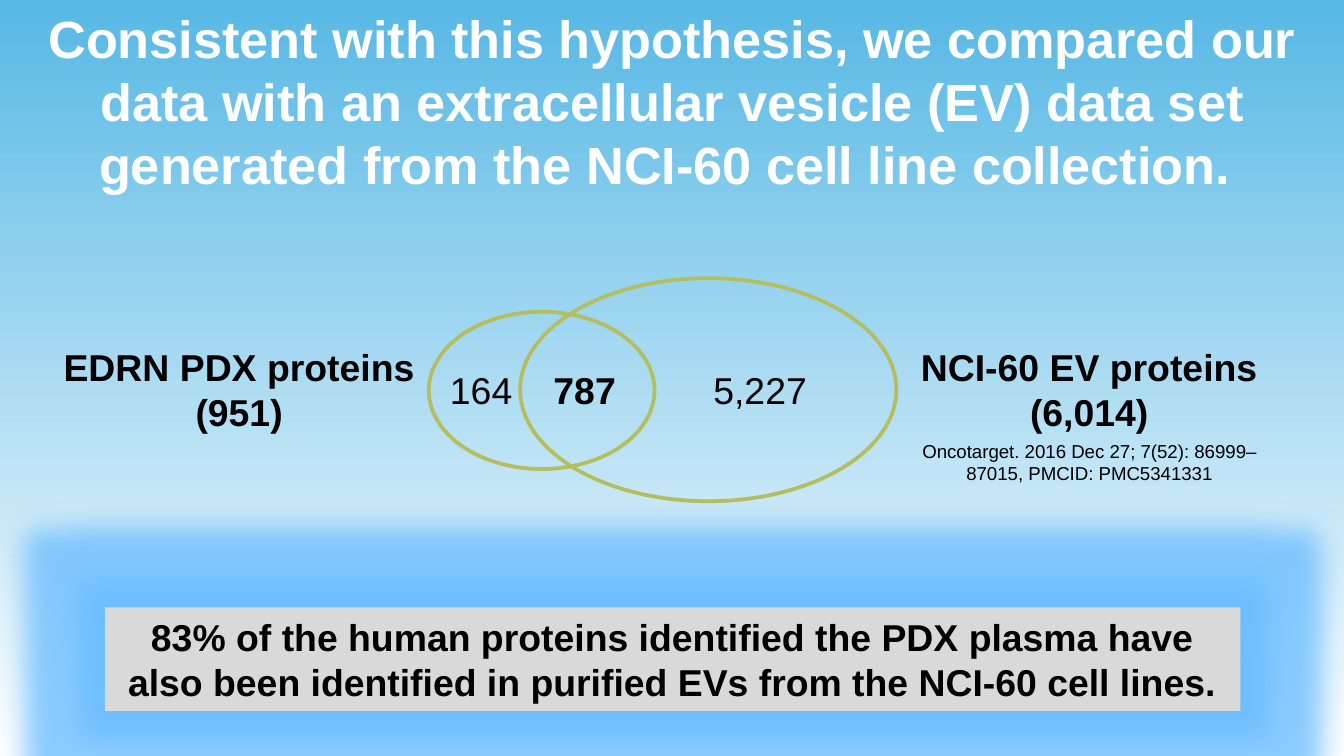
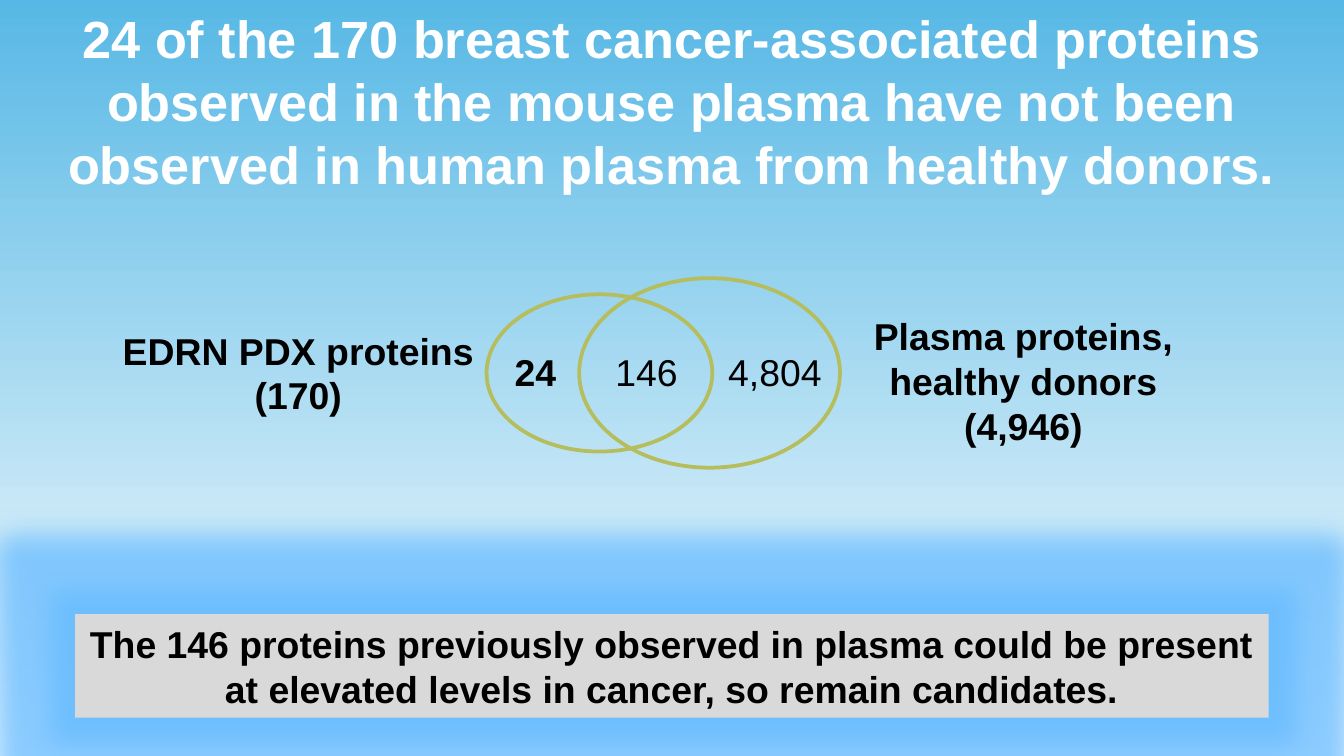
from lxml import etree
from pptx import Presentation
from pptx.dml.color import RGBColor
from pptx.enum.shapes import MSO_SHAPE
from pptx.enum.text import MSO_ANCHOR, MSO_AUTO_SIZE, PP_ALIGN
from pptx.oxml import parse_xml
from pptx.util import Inches, Pt

RECT, OVAL = MSO_SHAPE.RECTANGLE, MSO_SHAPE.OVAL
LEFT, CENTER = PP_ALIGN.LEFT, PP_ALIGN.CENTER
TOP, MIDDLE = MSO_ANCHOR.TOP, MSO_ANCHOR.MIDDLE
FIT = MSO_AUTO_SIZE.SHAPE_TO_FIT_TEXT

SKY, WHITE, BLACK = "57B8E5", "FFFFFF", "000000"
GRAY, OLIVE, GLOW = "D9D9D9", "B5BD5D", "66BBFF"
NS = "http://schemas.openxmlformats.org/drawingml/2006/main"

# Text styles: font values, colour, alignment, wrap
STYLES = {
    "title": ({"size": Pt(28), "bold": True}, WHITE, CENTER, True),
    "banner": ({"size": Pt(20), "bold": True}, BLACK, CENTER, True),
    "label": ({"size": Pt(20), "bold": True}, BLACK, CENTER, False),
    "block": ({"size": Pt(20), "bold": True}, BLACK, CENTER, True),
    "count": ({"size": Pt(20), "bold": False}, BLACK, LEFT, False),
    "key": ({"size": Pt(20), "bold": True}, BLACK, LEFT, False),
    "cite": ({"size": Pt(10), "bold": False}, BLACK, CENTER, True),
}

SLIDES = [
    {
        "title": ((0.1, 0, 9.8, 1.51),
                  "Consistent with this hypothesis, we compared our data with an "
                  "extracellular vesicle (EV) data set generated from the NCI-60 "
                  "cell line collection. "),
        "banner": ((0.78, 4.52, 8.45, 0.77),
                   "83% of the human proteins identified the PDX plasma have also "
                   "been identified in purified EVs from the NCI-60 cell lines."),
        "sets": [(3.87, 2.07, 2.8, 1.66), (3.19, 2.32, 1.68, 1.17)],
        "texts": [
            ("label", (0.36, 2.51, 2.84, 0.77), "EDRN PDX proteins\n(951)"),
            ("count", (3.25, 2.68, 0.67, 0.44), "164"),
            ("key", (4.02, 2.68, 0.67, 0.44), "787"),
            ("count", (5.21, 2.68, 0.9, 0.44), "5,227"),
            ("label", (6.74, 2.51, 2.73, 0.77), "NCI-60 EV proteins\n(6,014)"),
            ("cite", (6.57, 3.22, 3.07, 0.44),
             "Oncotarget. 2016 Dec 27; 7(52): 86999–87015, PMCID: PMC5341331"),
        ],
    },
    {
        "title": ((0.03, 0, 9.93, 1.51),
                  "24 of the 170 breast cancer-associated proteins observed in the "
                  "mouse plasma have not been observed in human plasma from "
                  "healthy donors."),
        "banner": ((0.56, 4.57, 8.88, 0.77),
                   "The 146 proteins previously observed in plasma could be present "
                   "at elevated levels in cancer, so remain candidates."),
        "sets": [(4.31, 2.07, 1.94, 1.41), (3.62, 2.19, 1.68, 1.17)],
        "texts": [
            ("label", (0.8, 2.39, 2.84, 0.77), "EDRN PDX proteins\n(170)"),
            ("key", (3.73, 2.55, 0.51, 0.44), "24"),
            ("count", (4.48, 2.55, 0.67, 0.44), "146"),
            ("block", (6.18, 2.28, 2.87, 1.11),
             "Plasma proteins, healthy donors\n(4,946)"),
            ("count", (5.32, 2.55, 0.9, 0.44), "4,804"),
        ],
    },
]


def rgb(code):
    return RGBColor.from_string(code)


def write(shape, style, text, anchor=TOP):
    """Fill a shape with text, one paragraph per line, in a named style."""
    look, color, align, wrap = STYLES[style]
    frame = shape.text_frame
    frame.text = text
    frame.word_wrap = wrap
    frame.auto_size = FIT
    frame.vertical_anchor = anchor
    for para in frame.paragraphs:
        para.alignment = align
        font = para.runs[0].font
        for name, value in {"name": "Arial", **look}.items():
            setattr(font, name, value)
        font.color.rgb = rgb(color)


prs = Presentation()
prs.slide_width, prs.slide_height = Inches(10), Inches(5.625)

back = prs.slide_master.background.fill
back.gradient()
back.gradient_angle = 270
for stop, color in zip(back.gradient_stops, (SKY, WHITE)):
    stop.color.rgb = rgb(color)

for data in SLIDES:
    slide = prs.slides.add_slide(prs.slide_layouts[6])
    shapes = slide.shapes

    box, text = data["title"]
    write(shapes.add_textbox(*map(Inches, box)), "title", text)

    box, text = data["banner"]
    banner = shapes.add_shape(RECT, *map(Inches, box))
    banner.fill.solid()
    banner.fill.fore_color.rgb = rgb(GRAY)
    banner.line.fill.background()
    banner.shadow.inherit = False
    effects = banner._element.spPr.find(f"{{{NS}}}effectLst")
    glow = parse_xml(f'<a:glow xmlns:a="{NS}" rad="{Inches(0.4)}"/>')
    tint = etree.SubElement(glow, f"{{{NS}}}srgbClr", val=GLOW)
    etree.SubElement(tint, f"{{{NS}}}alpha", val="75000")
    effects.append(glow)
    write(banner, "banner", text, MIDDLE)

    for box in data["sets"]:
        ring = shapes.add_shape(OVAL, *map(Inches, box))
        ring.fill.background()
        ring.line.color.rgb = rgb(OLIVE)
        ring.line.width = Pt(2)
        ring.shadow.inherit = False

    for style, box, text in data["texts"]:
        write(shapes.add_textbox(*map(Inches, box)), style, text)

prs.save("out.pptx")
